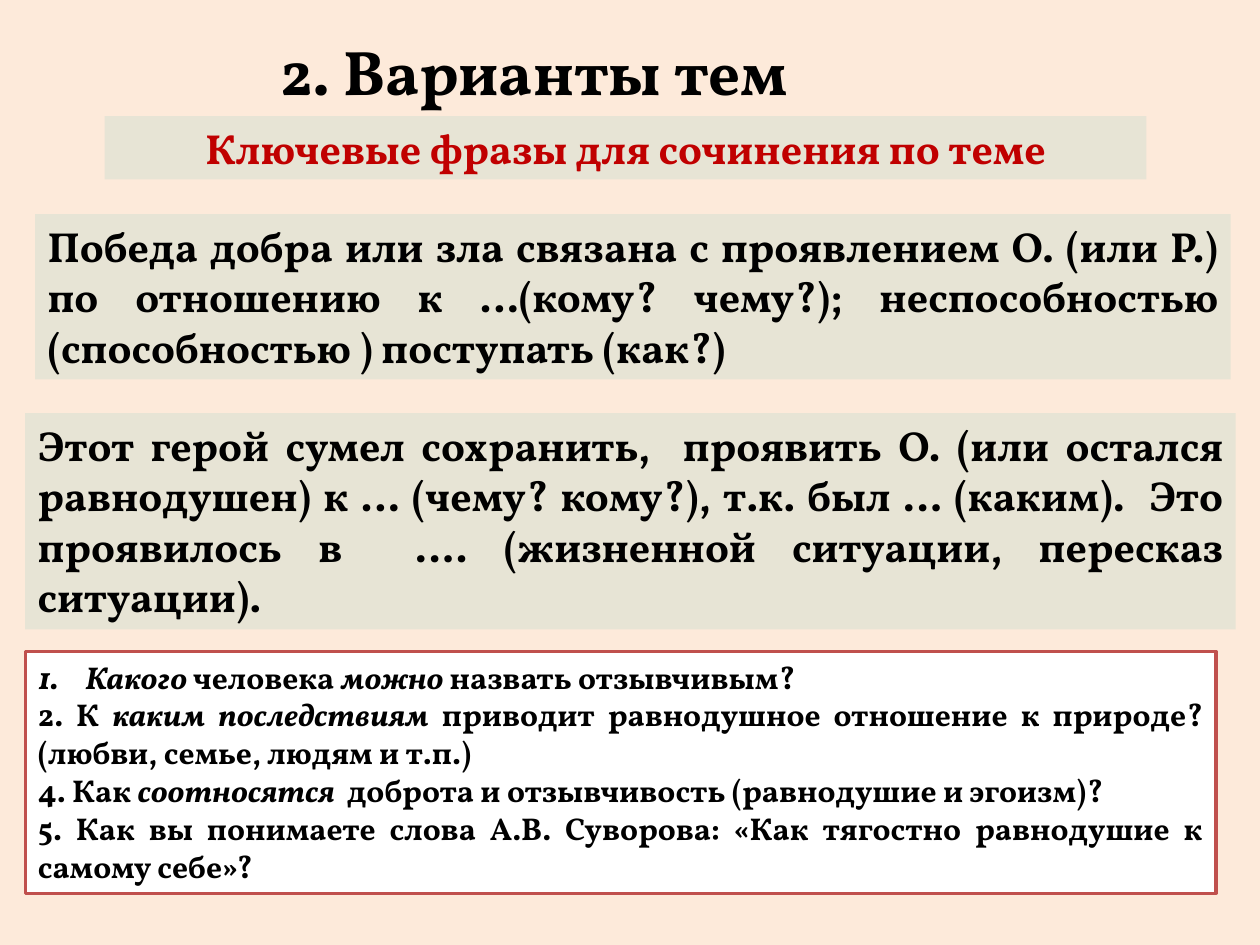
from pptx import Presentation
from pptx.dml.color import RGBColor
from pptx.enum.shapes import MSO_SHAPE
from pptx.enum.text import MSO_ANCHOR, MSO_AUTO_SIZE, PP_ALIGN
from pptx.oxml.xmlchemy import OxmlElement
from pptx.util import Cm, Pt

FONT = "Vollkorn"
BLACK = "000000"


def color(hex_string):
    return RGBColor.from_string(hex_string)


def write_paragraph(paragraph, runs, size, alignment, font_color=BLACK):
    """Add (text, italic) runs to a paragraph."""
    paragraph.alignment = alignment
    paragraph.space_before = Pt(0)
    for text, italic in runs:
        run = paragraph.add_run()
        run.text = text
        run.font.name = FONT
        run.font.size = Pt(size)
        run.font.bold = True
        run.font.italic = italic
        run.font.color.rgb = color(font_color)


presentation = Presentation()
presentation.slide_width = Cm(25.4)
presentation.slide_height = Cm(19.05)
slide = presentation.slides.add_slide(presentation.slide_layouts[1])
slide.background.fill.solid()
slide.background.fill.fore_color.rgb = color("FDEADA")

# Title and question list sit in the template's placeholders
title = slide.shapes.title
questions = slide.placeholders[1]
for shape, box in [
    (title, (3.3, 0.53, 15.19, 1.8)),
    (questions, (0.51, 13.13, 24, 4.88)),
]:
    shape.left, shape.top, shape.width, shape.height = map(Cm, box)
    shape.text_frame.word_wrap = True
    shape.text_frame.auto_size = MSO_AUTO_SIZE.NONE
    shape.text_frame.vertical_anchor = MSO_ANCHOR.TOP

write_paragraph(
    title.text_frame.paragraphs[0], [("2. Варианты тем ", False)], 36, PP_ALIGN.CENTER
)

# Key phrase panels
panels = [
    ((2.11, 2.34, 21, 1.28), PP_ALIGN.CENTER, "C00000",
     "Ключевые фразы для сочинения по теме"),
    ((0.71, 4.32, 24.1, 3.33), PP_ALIGN.JUSTIFY, BLACK,
     "Победа добра или зла связана с проявлением О. (или Р.) по отношению к "
     "…(кому? чему?); неспособностью (способностью ) поступать (как?)"),
    ((0.51, 8.33, 24.4, 4.36), PP_ALIGN.JUSTIFY, BLACK,
     "Этот герой сумел сохранить,  проявить О. (или остался равнодушен) к … "
     "(чему? кому?), т.к. был … (каким).  Это проявилось в  …. (жизненной "
     "ситуации, пересказ ситуации)."),
]
for box, alignment, font_color, text in panels:
    panel = slide.shapes.add_shape(MSO_SHAPE.RECTANGLE, *map(Cm, box))
    panel.shadow.inherit = False
    panel.fill.solid()
    panel.fill.fore_color.rgb = color("E7E4D5")
    panel.line.fill.background()
    panel.text_frame.word_wrap = True
    panel.text_frame.vertical_anchor = MSO_ANCHOR.TOP
    write_paragraph(
        panel.text_frame.paragraphs[0], [(text, False)], 24, alignment, font_color
    )

# Framed list of questions
questions.fill.solid()
questions.fill.fore_color.rgb = color("FFFFFF")
questions.line.color.rgb = color("C0504D")
questions.line.width = Pt(2)

question_runs = [
    [("Какого ", True), ("человека ", False), ("можно ", True),
     ("назвать отзывчивым? ", False)],
    [("2. К ", False), ("каким последствиям ", True),
     ("приводит равнодушное отношение к природе? (любви, семье, людям и т.п.)", False)],
    [("4. Как ", False), ("соотносятся ", True),
     (" доброта и отзывчивость (равнодушие и эгоизм)?", False)],
    [("5. Как вы понимаете слова А.В. Суворова: "
      "«Как тягостно равнодушие к самому себе»?", False)],
]
frame = questions.text_frame
for index, runs in enumerate(question_runs):
    paragraph = frame.paragraphs[0] if index == 0 else frame.add_paragraph()
    write_paragraph(paragraph, runs, 18, PP_ALIGN.JUSTIFY)
    properties = paragraph._p.get_or_add_pPr()
    # Only the first question is numbered automatically
    indent = Cm(0.95) if index == 0 else 0
    properties.set("marL", str(indent))
    properties.set("indent", str(-indent))
    if index == 0:
        bullet_font = OxmlElement("a:buFont")
        bullet_font.set("typeface", "+mj-lt")
        properties.append(bullet_font)
        bullet = OxmlElement("a:buAutoNum")
        bullet.set("type", "arabicPeriod")
    else:
        bullet = OxmlElement("a:buNone")
    properties.append(bullet)

presentation.save("out.pptx")
